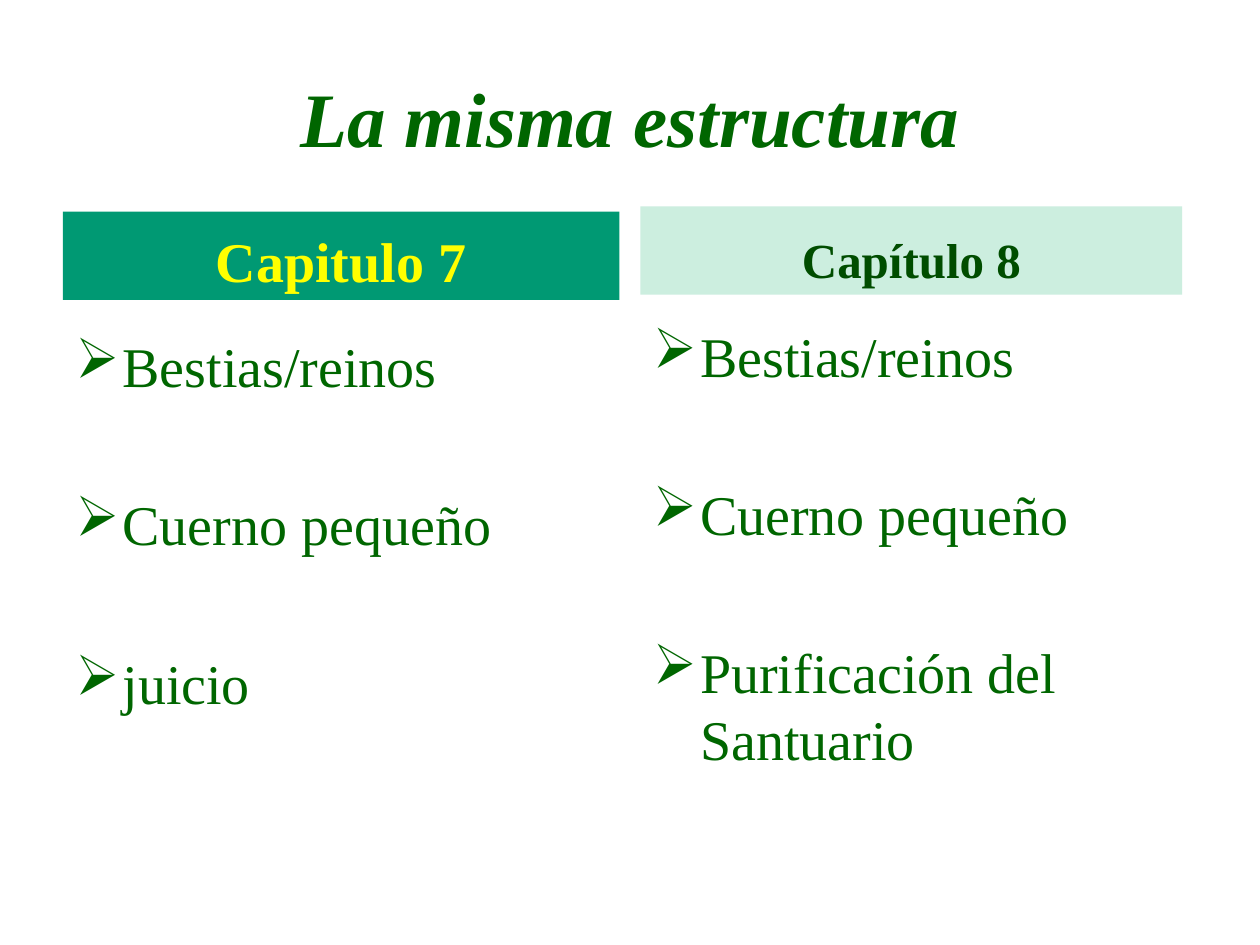
from lxml import etree
from pptx import Presentation
from pptx import util as u
from pptx.dml.color import RGBColor
from pptx.enum import shapes, text
from pptx.oxml.ns import qn

TITLE = "La misma estructura"
CHAPTERS = [
    dict(heading="Capitulo 7", items=["Bestias/reinos", "Cuerno pequeño", "juicio"],
         fill="009973", color="FFFF00", size=32,
         heading_box=(36, 121, 318, 50.4), items_box=(36, 186, 318, 296.6)),
    dict(heading="Capítulo 8",
         items=["Bestias/reinos", "Cuerno pequeño", "Purificación del Santuario"],
         fill="CCEEDF", color="004D00", size=28,
         heading_box=(366, 118, 309.6, 50.4), items_box=(366, 180, 318, 325.4)),
]
THEME = dict(font="Times New Roman", green="006600", title=44, item=32,
             bullet="➢", indent=27, gap=52)


def style(paragraph, size, color, bold=False, italic=False):
    font = paragraph.font
    font.name, font.size = THEME["font"], u.Pt(size)
    font.bold, font.italic = bold, italic
    font.color.rgb = RGBColor.from_string(color)


def add_bullet(paragraph):
    properties = paragraph._p.get_or_add_pPr()
    properties.set("marL", str(u.Pt(THEME["indent"])))
    properties.set("indent", str(-u.Pt(THEME["indent"])))
    etree.SubElement(properties, qn("a:buChar"), char=THEME["bullet"])


def add_heading(slide, chapter):
    band = slide.shapes.add_shape(shapes.MSO_SHAPE.RECTANGLE,
                                  *map(u.Pt, chapter["heading_box"]))
    band.shadow.inherit = False
    band.fill.solid()
    band.fill.fore_color.rgb = RGBColor.from_string(chapter["fill"])
    band.line.fill.background()
    frame = band.text_frame
    frame.vertical_anchor = text.MSO_ANCHOR.BOTTOM
    frame.text = chapter["heading"]
    frame.paragraphs[0].alignment = text.PP_ALIGN.CENTER
    style(frame.paragraphs[0], chapter["size"], chapter["color"], bold=True)


def add_items(slide, chapter):
    frame = slide.shapes.add_textbox(*map(u.Pt, chapter["items_box"])).text_frame
    frame.word_wrap = True
    frame.text = "\n".join(chapter["items"])
    for i, item in enumerate(frame.paragraphs):
        if i:
            item.space_before = u.Pt(THEME["gap"])
        add_bullet(item)
        style(item, THEME["item"], THEME["green"])


prs = Presentation()
prs.slide_width, prs.slide_height = u.Pt(720), u.Pt(540)
slide = prs.slides.add_slide(prs.slide_layouts[5])

# Title
title = slide.shapes.title
title.left, title.top, title.width, title.height = map(u.Pt, (36, 21.6, 648, 90))
title.text_frame.text = TITLE
title.text_frame.vertical_anchor = text.MSO_ANCHOR.MIDDLE
title.text_frame.paragraphs[0].alignment = text.PP_ALIGN.CENTER
style(title.text_frame.paragraphs[0], THEME["title"], THEME["green"], bold=True, italic=True)

# Chapter columns
for chapter in CHAPTERS:
    add_heading(slide, chapter)
    add_items(slide, chapter)

prs.save("out.pptx")
